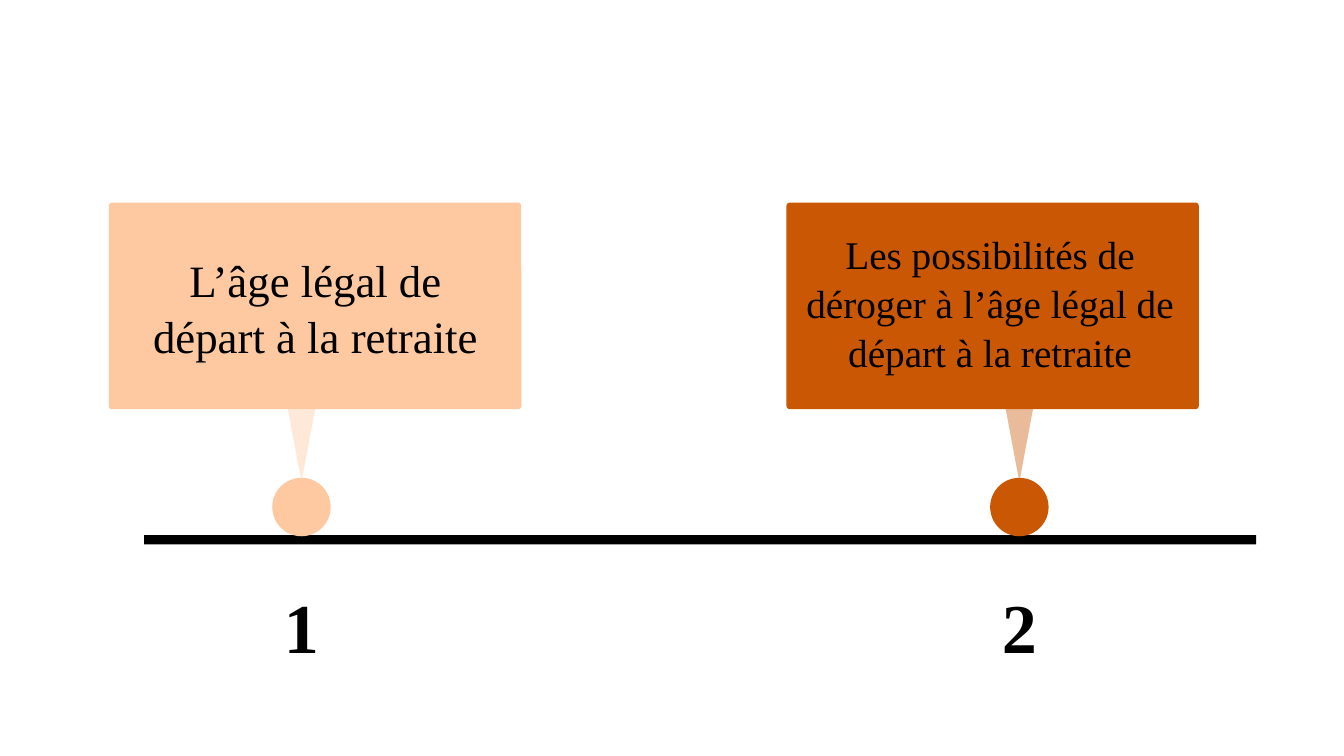
from lxml import etree
from pptx import Presentation
from pptx.dml.color import RGBColor
from pptx.enum.shapes import MSO_SHAPE as SHAPE
from pptx.enum.text import MSO_ANCHOR, PP_ALIGN
from pptx.oxml.ns import qn
from pptx.util import Inches, Pt

COLORS = {"black": "000000", "peach": "FEC9A1", "orange": "CA5703"}
FONT = "Times New Roman"

# color, card left, marker center, text, text box, text size
STEPS = [
    ("peach", 1.08, 2.99, "L’âge légal de départ à la retraite",
     (1.38, 2.45, 3.5, 1.18), 32),
    ("orange", 7.8, 10.11, "Les possibilités de déroger à l’âge légal de départ à la retraite",
     (7.75, 2.24, 4.14, 1.51), 28),
]


def add_filled(s, kind, box, color, opacity=100):
    sp = s.shapes.add_shape(kind, *map(Inches, box))
    sp.shadow.inherit = False
    sp.fill.solid()
    sp.fill.fore_color.rgb = RGBColor.from_string(COLORS[color])
    sp.line.fill.background()
    if opacity < 100:
        clr = sp.fill._xPr.find(".//" + qn("a:srgbClr"))
        etree.SubElement(clr, qn("a:alpha")).set("val", str(opacity * 1000))
    return sp


def add_text(s, text, box, size, bold=False):
    tf = s.shapes.add_textbox(*map(Inches, box)).text_frame
    tf.word_wrap = True
    tf.vertical_anchor = MSO_ANCHOR.MIDDLE
    p = tf.paragraphs[0]
    p.alignment = PP_ALIGN.CENTER
    p.line_spacing = 1.04
    r = p.add_run()
    r.text = text
    r.font.name = FONT
    r.font.size = Pt(size)
    r.font.bold = bold
    r.font.color.rgb = RGBColor.from_string(COLORS["black"])


def add_step(s, number, color, left, center, text, text_box, size):
    """Card with its pointer, dot on the timeline and number below."""
    card = add_filled(s, SHAPE.ROUNDED_RECTANGLE, (left, 2.01, 4.09, 2.05), color)
    card.adjustments[0] = 0.016
    pointer = add_filled(s, SHAPE.ISOSCELES_TRIANGLE,
                         (center - 0.135, 4.06, 0.27, 0.72), color, opacity=40)
    pointer.rotation = 180
    add_filled(s, SHAPE.OVAL, (center - 0.29, 4.74, 0.58, 0.58), color)
    add_text(s, text, text_box, size)
    add_text(s, str(number), (center - 1.01, 5.72, 2.02, 0.94), 50, bold=True)


def main():
    prs = Presentation()
    prs.slide_width, prs.slide_height = Inches(13.33), Inches(7.5)
    s = prs.slides.add_slide(prs.slide_layouts[6])
    add_filled(s, SHAPE.RECTANGLE, (1.43, 5.31, 11.03, 0.09), "black")
    for number, step in enumerate(STEPS, 1):
        add_step(s, number, *step)
    prs.save("out.pptx")


if __name__ == "__main__":
    main()
